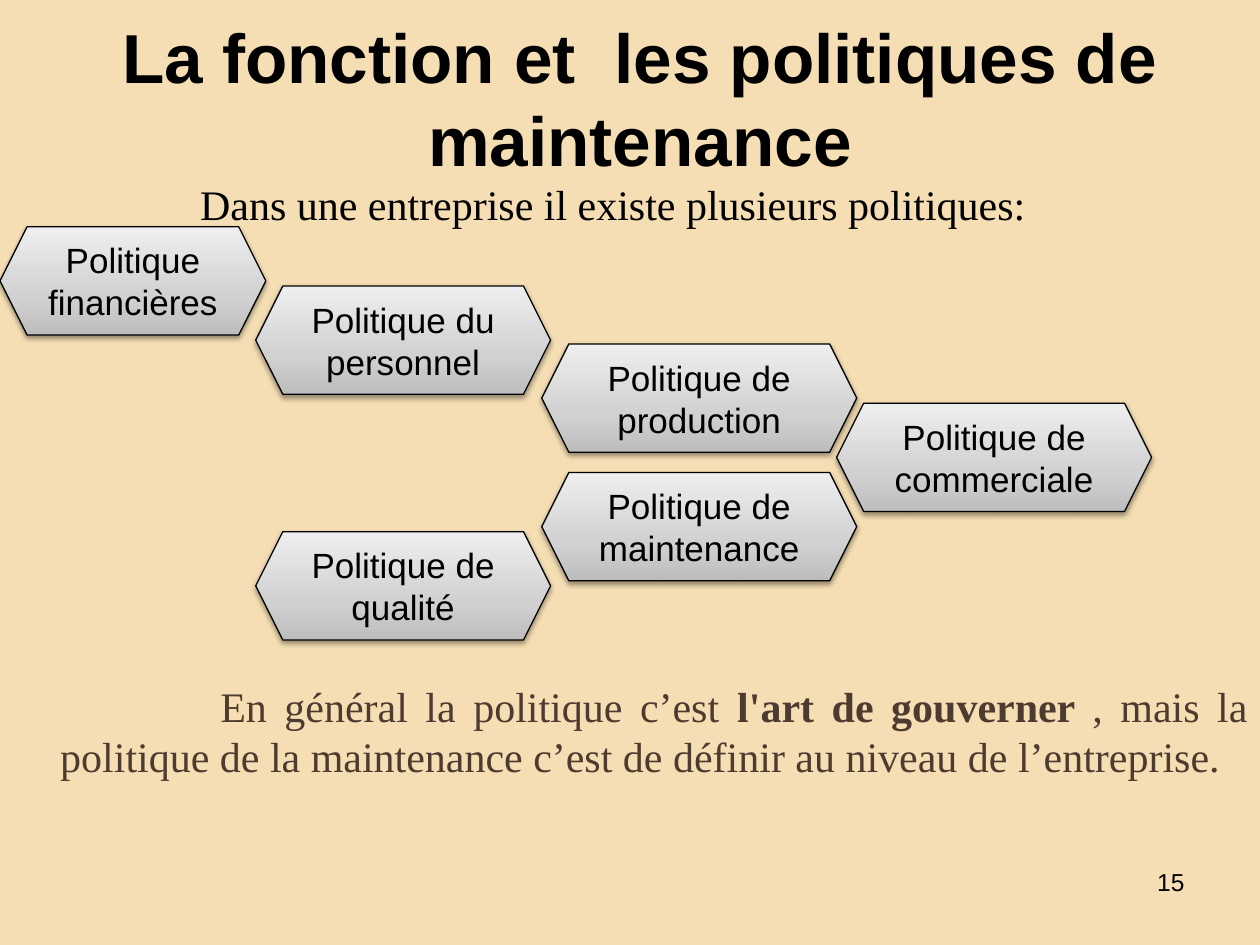
"""Build the slide on the company policies and the maintenance policy."""
from dataclasses import dataclass

from pptx import Presentation
from pptx.dml.color import RGBColor
from pptx.enum.shapes import MSO_SHAPE
from pptx.enum.text import MSO_ANCHOR, MSO_AUTO_SIZE, PP_ALIGN
from pptx.oxml import parse_xml
from pptx.oxml.ns import nsdecls
from pptx.util import Inches, Pt

HEXAGON = MSO_SHAPE.HEXAGON
MIDDLE, TOP = MSO_ANCHOR.MIDDLE, MSO_ANCHOR.TOP
CENTER, RIGHT, JUSTIFY = PP_ALIGN.CENTER, PP_ALIGN.RIGHT, PP_ALIGN.JUSTIFY
NO_AUTOFIT = MSO_AUTO_SIZE.NONE

COLORS = {"background": "F5DEB3", "ink": "000000", "brown": "4E3B30"}
GRADIENT = {0: "BDBDBD", 35: "D1D1D1", 100: "EEEEEE"}
TITLE_FONT = {"name": "Arial", "size": Pt(39.6), "bold": True}
LABEL_FONT = {"name": "Arial", "size": Pt(20), "bold": False}
NUMBER_FONT = {"name": "Arial", "size": Pt(14), "bold": False}
BODY_FONT = {"name": "Times New Roman", "size": Pt(24), "bold": False}
STRONG_FONT = BODY_FONT | {"bold": True}
HEXAGON_HEIGHT = 0.86


@dataclass
class Span:
    text: str
    font: dict
    color: str = "ink"


@dataclass
class Policy:
    text: str
    left: float
    top: float
    width: float


POLICIES = [
    Policy("Politique financières", 0, 1.8, 2.11),
    Policy("Politique du personnel", 2.03, 2.27, 2.34),
    Policy("Politique de production", 4.3, 2.73, 2.5),
    Policy("Politique de commerciale", 6.64, 3.2, 2.5),
    Policy("Politique de maintenance", 4.3, 3.75, 2.5),
    Policy("Politique de qualité", 2.03, 4.22, 2.34),
]


def write(shape, spans: list[Span], align, anchor=TOP, indent: float | None = None,
          line_spacing: float | None = None) -> None:
    """Fill a shape with one formatted paragraph."""
    frame = shape.text_frame
    frame.word_wrap = True
    frame.auto_size = NO_AUTOFIT
    frame.vertical_anchor = anchor
    para = frame.paragraphs[0]
    para.alignment = align
    if line_spacing is not None:
        para.line_spacing = line_spacing
    if indent is not None:
        properties = para._p.get_or_add_pPr()
        properties.set("marL", str(Inches(0.38)))
        properties.set("indent", str(Inches(indent)))
    for span in spans:
        run = para.add_run()
        run.text = span.text
        for key, value in span.font.items():
            setattr(run.font, key, value)
        run.font.color.rgb = RGBColor.from_string(COLORS[span.color])


def add_text(page, area: tuple, spans: list[Span], align, **layout) -> None:
    """Add a text box holding one paragraph."""
    box = page.shapes.add_textbox(*map(Inches, area))
    write(box, spans, align, **layout)


def add_policy(page, policy: Policy) -> None:
    """Add a grey hexagon with a soft shadow and its label."""
    shape = page.shapes.add_shape(HEXAGON, Inches(policy.left), Inches(policy.top),
                                  Inches(policy.width), Inches(HEXAGON_HEIGHT))
    shape.line.color.rgb = RGBColor.from_string(COLORS["ink"])
    shape.line.width = Pt(0.75)
    stops = "".join(f'<a:gs pos="{place * 1000}"><a:srgbClr val="{color}"/></a:gs>'
                    for place, color in GRADIENT.items())
    fill = parse_xml(f'<a:gradFill {nsdecls("a")} rotWithShape="1"><a:gsLst>{stops}</a:gsLst>'
                     '<a:lin ang="16200000" scaled="1"/></a:gradFill>')
    shadow = parse_xml(f'<a:effectLst {nsdecls("a")}><a:outerShdw blurRad="{Pt(3.1)}" '
                       f'dist="{Pt(1.6)}" dir="5400000" rotWithShape="0">'
                       f'<a:srgbClr val="{COLORS["ink"]}"><a:alpha val="38000"/></a:srgbClr>'
                       '</a:outerShdw></a:effectLst>')
    outline = shape.line._get_or_add_ln()
    outline.addprevious(fill)
    outline.addnext(shadow)
    write(shape, [Span(policy.text, LABEL_FONT)], CENTER, anchor=MIDDLE)


def main() -> None:
    """Create and save the deck."""
    deck = Presentation()
    deck.slide_width, deck.slide_height = Inches(10), Inches(7.5)
    page = deck.slides.add_slide(deck.slide_layouts[5])
    page.background.fill.solid()
    page.background.fill.fore_color.rgb = RGBColor.from_string(COLORS["background"])

    title = page.shapes.title
    title.left, title.top, title.width, title.height = map(Inches, (0.33, 0.31, 9.5, 0.92))
    write(title, [Span("La fonction et  les politiques de maintenance", TITLE_FONT)],
          CENTER, anchor=MIDDLE)
    add_text(page, (0.11, 1.17, 9.5, 0.78),
             [Span("Dans une entreprise il existe plusieurs politiques:", BODY_FONT)],
             JUSTIFY, indent=1, line_spacing=1.5)
    add_text(page, (7.17, 6.83, 2.33, 0.52), [Span("15", NUMBER_FONT)], RIGHT)
    add_text(page, (0, 5.35, 10, 0.91), [
        Span("En général la politique c’est ", BODY_FONT, "brown"),
        Span("l'art de gouverner ", STRONG_FONT, "brown"),
        Span(", mais la politique de la maintenance c’est de définir "
             "au niveau de l’entreprise.", BODY_FONT, "brown"),
    ], JUSTIFY, indent=1.27)
    for policy in POLICIES:
        add_policy(page, policy)
    deck.save("out.pptx")


if __name__ == "__main__":
    main()
